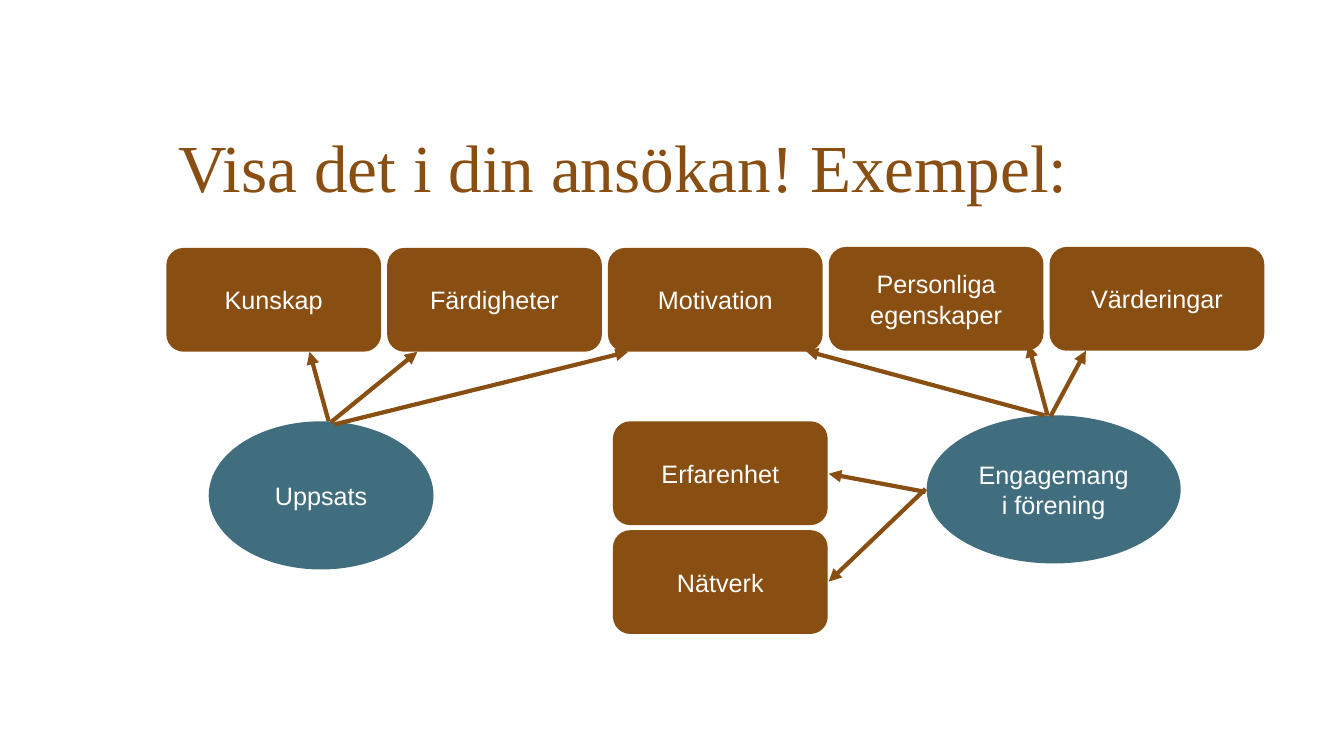
from dataclasses import dataclass

from lxml.etree import SubElement
from pptx import Presentation
from pptx.dml.color import RGBColor
from pptx.enum.shapes import MSO_CONNECTOR, MSO_SHAPE
from pptx.enum.text import MSO_ANCHOR, PP_ALIGN
from pptx.oxml.ns import qn
from pptx.util import Inches, Pt


@dataclass(frozen=True)
class Theme:
    brown: RGBColor = RGBColor(0x89, 0x4E, 0x11)
    teal: RGBColor = RGBColor(0x41, 0x6E, 0x7F)
    white: RGBColor = RGBColor(0xFF, 0xFF, 0xFF)
    title_font: str = "Times New Roman"
    body_font: str = "Arial"
    title_size: int = 48
    body_size: int = 18
    arrow_width: int = 3


THEME = Theme()

BOX_WIDTH, BOX_HEIGHT = 2.13, 1.03
ROW_LEFT, ROW_STEP = 1.65, 2.19
COLUMN_LEFT, COLUMN_TOP, COLUMN_STEP = 6.08, 4.18, 1.08

QUALITIES = [
    ("Kunskap", 2.46),
    ("Färdigheter", 2.46),
    ("Motivation", 2.46),
    ("Personliga egenskaper", 2.45),
    ("Värderingar", 2.45),
]
GAINS = ["Erfarenhet", "Nätverk"]
ACTIVITIES = [
    ("Uppsats", 2.07, 4.18, 2.23, 1.47),
    ("Engagemang i förening", 9.19, 4.12, 2.52, 1.47),
]
ARROWS = [
    ((3.26, 4.18), (3.07, 3.49)),
    ((3.28, 4.19), (4.14, 3.49)),
    ((3.32, 4.21), (6.23, 3.49)),
    ((10.42, 4.13), (10.77, 3.48)),
    ((10.36, 4.12), (7.99, 3.48)),
    ((10.39, 4.12), (10.2, 3.42)),
    ((9.18, 4.88), (8.22, 4.7)),
    ((9.18, 4.85), (8.22, 5.77)),
]


def write_text(frame, text, *, font=THEME.body_font, size=THEME.body_size,
               color=THEME.white, align=PP_ALIGN.CENTER,
               anchor=MSO_ANCHOR.MIDDLE, line_spacing=1.0):
    frame.word_wrap = True
    frame.vertical_anchor = anchor
    para = frame.paragraphs[0]
    para.alignment = align
    para.line_spacing = line_spacing
    span = para.add_run()
    span.text = text
    span.font.name = font
    span.font.size = Pt(size)
    span.font.color.rgb = color


def add_title(page, text):
    box = page.shapes.add_textbox(Inches(1.77), Inches(0.39), Inches(9.65), Inches(1.97))
    frame = box.text_frame
    frame.margin_left = frame.margin_top = frame.margin_right = 0
    frame.margin_bottom = Inches(0.31)
    write_text(frame, text, font=THEME.title_font, size=THEME.title_size,
               color=THEME.brown, align=PP_ALIGN.LEFT,
               anchor=MSO_ANCHOR.BOTTOM, line_spacing=0.9)


def add_label(page, kind, text, left, top, width, height, fill):
    """Add a filled shape with a centred caption."""
    shape = page.shapes.add_shape(kind, Inches(left), Inches(top),
                                  Inches(width), Inches(height))
    shape.shadow.inherit = False
    shape.fill.solid()
    shape.fill.fore_color.rgb = fill
    shape.line.fill.background()
    write_text(shape.text_frame, text)


def add_box(page, text, left, top):
    add_label(page, MSO_SHAPE.ROUNDED_RECTANGLE, text, left, top,
              BOX_WIDTH, BOX_HEIGHT, THEME.brown)


def add_arrow(page, start, end):
    points = [Inches(value) for value in (*start, *end)]
    arrow = page.shapes.add_connector(MSO_CONNECTOR.STRAIGHT, *points)
    arrow.line.color.rgb = THEME.brown
    arrow.line.width = Pt(THEME.arrow_width)
    SubElement(arrow.line._get_or_add_ln(), qn("a:tailEnd"), type="triangle")
    SubElement(arrow._element.spPr, qn("a:effectLst"))


def main():
    deck = Presentation()
    deck.slide_width, deck.slide_height = Inches(13.33), Inches(7.5)
    page = deck.slides.add_slide(deck.slide_layouts[6])

    add_title(page, "Visa det i din ansökan! Exempel:")
    for index, (text, top) in enumerate(QUALITIES):
        add_box(page, text, ROW_LEFT + index * ROW_STEP, top)
    for index, text in enumerate(GAINS):
        add_box(page, text, COLUMN_LEFT, COLUMN_TOP + index * COLUMN_STEP)
    for text, *place in ACTIVITIES:
        add_label(page, MSO_SHAPE.OVAL, text, *place, THEME.teal)
    for start, end in ARROWS:
        add_arrow(page, start, end)

    deck.save("out.pptx")


if __name__ == "__main__":
    main()
